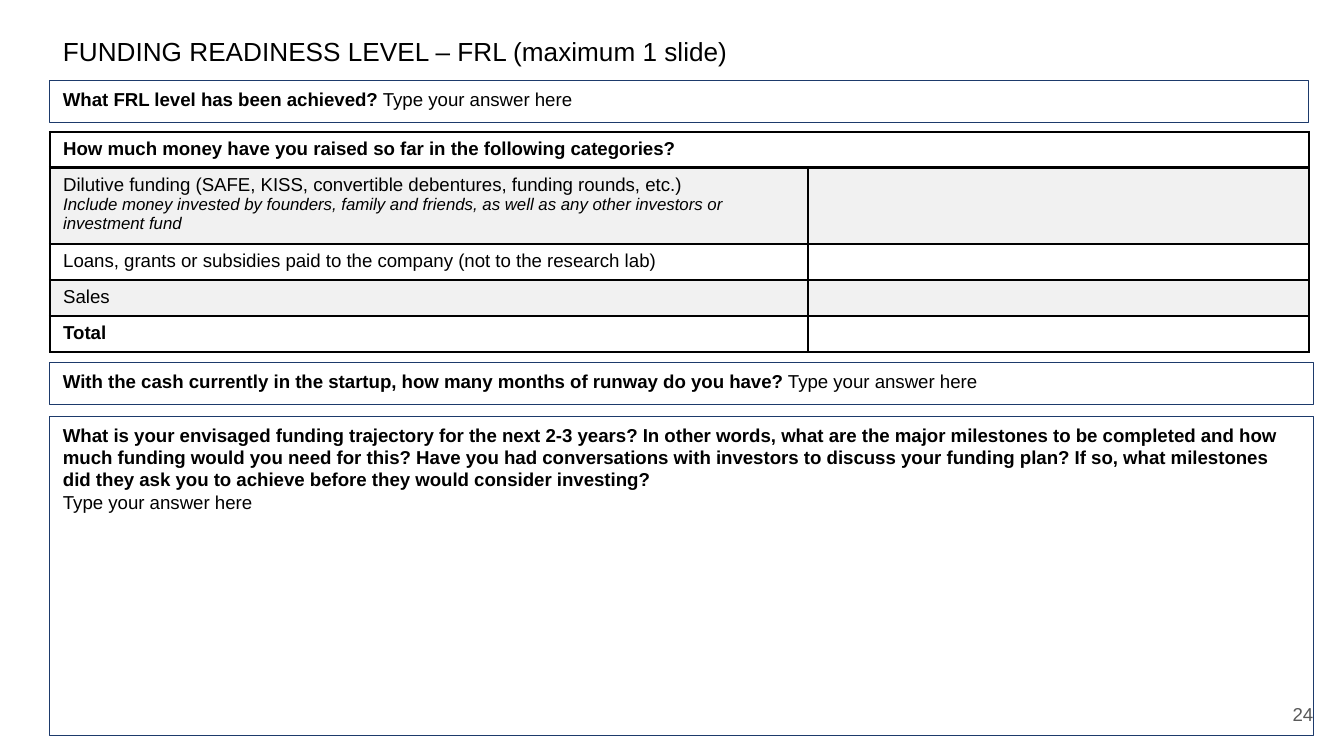
from lxml import etree
from pptx import Presentation
from pptx.dml.color import RGBColor
from pptx.enum import shapes, text
from pptx.oxml import ns
from pptx.util import Cm, Pt

BLACK = RGBColor(0x00, 0x00, 0x00)
NAVY = RGBColor(0x1D, 0x3A, 0x6B)
GRAY = RGBColor(0x59, 0x59, 0x59)
BAND = RGBColor(0xBD, 0xBD, 0xBD)

# A run is (words, size, style); style holds "b" for bold, "i" for italic.
ANSWER = ("Type your answer here", 10, "")
TITLE = [[("FUNDING READINESS LEVEL – FRL (maximum 1 slide)", 14, "")]]
NUMBER = [[("24", 10, "")]]

# Question boxes: top, width, height, paragraphs
LEVEL = (1.53, 23.8, 0.79,
         [[("What FRL level has been achieved? ", 10, "b"), ANSWER]])
RUNWAY = (6.86, 23.88, 0.79,
          [[("With the cash currently in the startup, how many months of "
             "runway do you have? ", 10, "b"), ANSWER]])
PLAN = (7.88, 23.88, 6.02,
        [[("What is your envisaged funding trajectory for the next 2-3 years? "
           "In other words, what are the major milestones to be completed and "
           "how much funding would you need for this? Have you had "
           "conversations with investors to discuss your funding plan? If so, "
           "what milestones did they ask you to achieve before they would "
           "consider investing?", 10, "b")],
         [ANSWER]])

# Table rows: height, shaded, paragraphs of the first cell
ROWS = [
    (0.64, False, [[("How much money have you raised so far in the following "
                     "categories?", 10, "b")]]),
    (1.3, True, [[("Dilutive funding (SAFE, KISS, convertible debentures, "
                   "funding rounds, etc.)", 10, "")],
                 [("Include money invested by founders, family and friends, as "
                   "well as any other investors or investment fund", 9, "i")]]),
    (0.64, False, [[("Loans, grants or subsidies paid to the company (not to "
                     "the research lab)", 10, "")]]),
    (0.64, True, [[("Sales", 10, "")]]),
    (0.64, False, [[("Total", 10, "b")]]),
]
COLS = [14.33, 9.47]
LEFT = 0.94


def write(frame, paras, color=BLACK):
    frame.word_wrap = True
    for i, runs in enumerate(paras):
        para = frame.add_paragraph() if i else frame.paragraphs[0]
        para.alignment = text.PP_ALIGN.LEFT
        for words, size, style in runs:
            run = para.add_run()
            run.text = words
            font = run.font
            font.name, font.size = "Arial", Pt(size)
            font.bold, font.italic = "b" in style, "i" in style
            font.color.rgb = color


def label(slide, box, paras, color=BLACK):
    """Add a text box with even insets and return its text frame."""
    frame = slide.shapes.add_textbox(*map(Cm, box)).text_frame
    frame.margin_left = frame.margin_right = Cm(0.25)
    frame.margin_top = frame.margin_bottom = Cm(0.25)
    write(frame, paras, color)
    return frame


def ask(slide, top, width, height, paras):
    """Add an outlined question box."""
    box = slide.shapes.add_shape(shapes.MSO_SHAPE.RECTANGLE, Cm(LEFT), Cm(top),
                                 Cm(width), Cm(height))
    box.shadow.inherit = False
    box.fill.background()
    box.line.color.rgb = NAVY
    box.line.width = Pt(0.5)
    box.text_frame.vertical_anchor = text.MSO_ANCHOR.TOP
    write(box.text_frame, paras)


def shade(cell, on):
    if not on:
        cell.fill.background()
        return
    cell.fill.solid()
    cell.fill.fore_color.rgb = BAND
    tint = cell.fill._xPr.find(".//" + ns.qn("a:srgbClr"))
    etree.SubElement(tint, ns.qn("a:alpha"), val="20000")


def border(cell, row):
    """Draw all four sides; the rule under the header is double width."""
    props = cell._tc.get_or_add_tcPr()
    wide = {"T": row == 1, "B": row == 0}
    for i, side in enumerate("LRTB"):
        line = etree.Element(ns.qn("a:ln" + side),
                             w=str(Pt(2 if wide.get(side) else 1)))
        fill = etree.SubElement(line, ns.qn("a:solidFill"))
        etree.SubElement(fill, ns.qn("a:srgbClr"), val=str(BLACK))
        props.insert(i, line)


def money(slide):
    """Add the table of money raised."""
    table = slide.shapes.add_table(
        len(ROWS), len(COLS), Cm(LEFT), Cm(2.49), Cm(sum(COLS)),
        Cm(sum(row[0] for row in ROWS))).table
    table.first_row = table.horz_banding = False
    for col, width in zip(table.columns, COLS):
        col.width = Cm(width)
    for r, (height, shaded, paras) in enumerate(ROWS):
        table.rows[r].height = Cm(height)
        for c in range(len(COLS)):
            cell = table.cell(r, c)
            shade(cell, shaded)
            border(cell, r)
            if c == 0:
                write(cell.text_frame, paras)
            else:  # keep the empty cell as low as its row
                etree.SubElement(cell.text_frame.paragraphs[0]._p,
                                 ns.qn("a:endParaRPr"), sz="1000")
    table.cell(0, 0).merge(table.cell(0, 1))


def main():
    deck = Presentation()
    deck.slide_width, deck.slide_height = Cm(25.4), Cm(14.29)
    slide = deck.slides.add_slide(deck.slide_layouts[6])

    head = label(slide, (LEFT, 0.33, 23.7, 1.14), TITLE).paragraphs[0]
    head.line_spacing, head.space_after = 1.15, Pt(8)
    page = label(slide, (23.55, 12.95, 1.52, 1.09), NUMBER, GRAY)
    page.vertical_anchor = text.MSO_ANCHOR.MIDDLE
    page.paragraphs[0].alignment = text.PP_ALIGN.RIGHT

    ask(slide, *LEVEL)
    ask(slide, *RUNWAY)
    money(slide)
    ask(slide, *PLAN)
    deck.save("out.pptx")


if __name__ == "__main__":
    main()
